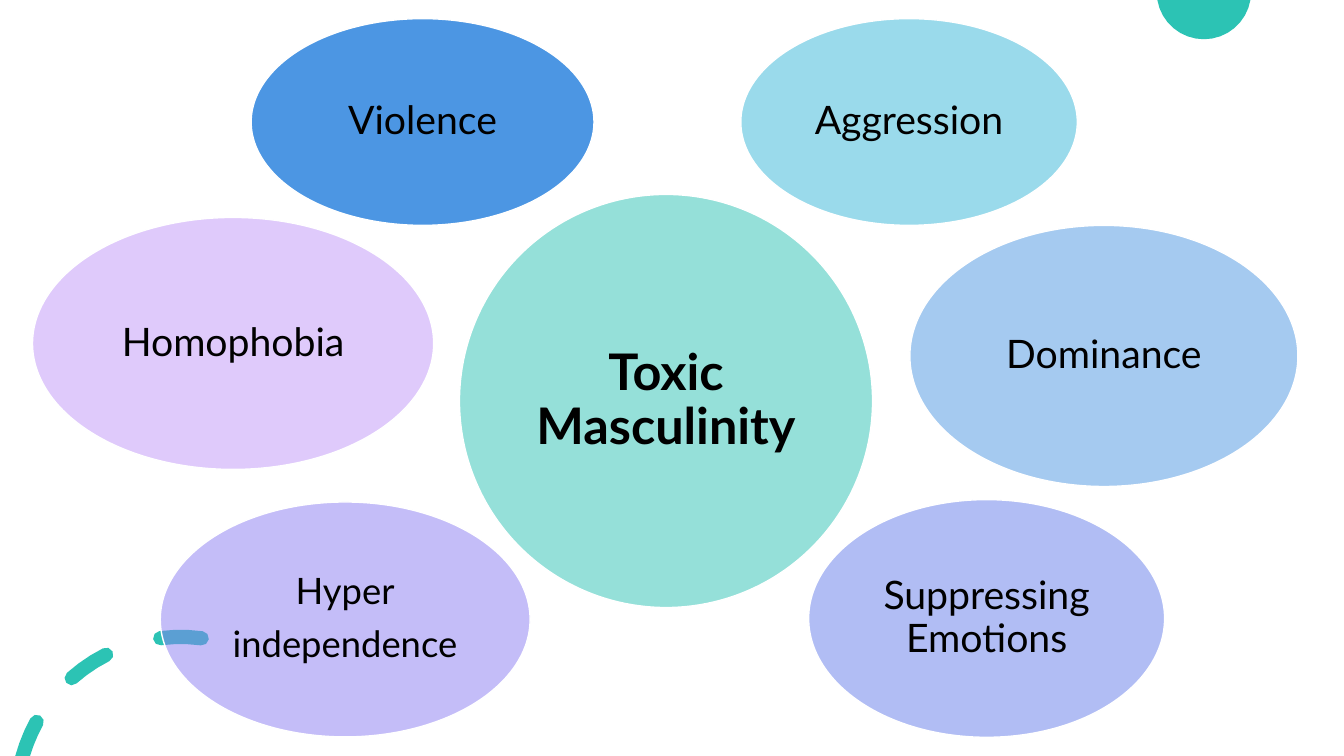
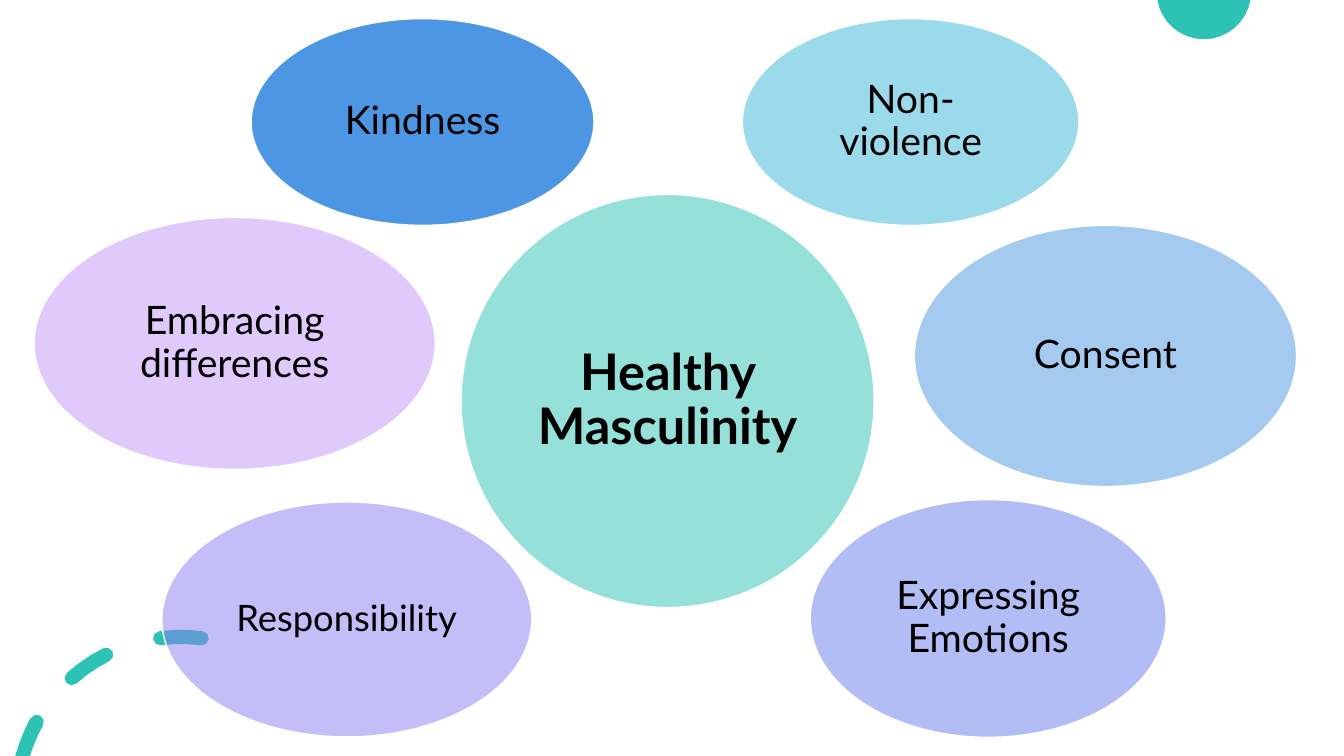
from dataclasses import dataclass
from math import asin, cos, pi, radians, sin

from lxml.etree import SubElement
from pptx import Presentation
from pptx.dml.color import RGBColor
from pptx.enum.shapes import MSO_SHAPE
from pptx.enum.text import MSO_ANCHOR, MSO_AUTO_SIZE, PP_ALIGN
from pptx.oxml.ns import qn
from pptx.util import Cm, Pt

# Shared look, lengths in centimetres
FONT = "Lato"
TEAL, WHITE, BLACK = "2CC3B4", "FFFFFF", "000000"
SLIDE_W, SLIDE_H = 33.87, 19.05
INSET = 0.15

Point = tuple[float, float]


@dataclass(frozen=True)
class Bubble:
    left: float
    top: float
    width: float
    height: float
    color: str
    size: int = 28
    alpha: int = 50


@dataclass(frozen=True)
class Label:
    lines: tuple[str, ...]
    trim: float = 0  # width taken off the bubble, kept centred
    fixed: bool = False  # not moved by the slide's shift


@dataclass(frozen=True)
class MindMap:
    title: str
    shift: float
    labels: tuple[Label, ...]


HUB = Bubble(11.58, 4.9, 10.41, 10.41, TEAL, 36)

# Clockwise from the top right
BUBBLES = (
    Bubble(18.67, 0.47, 8.48, 5.21, "36B7D9"),
    Bubble(22.93, 5.68, 9.78, 6.58, "4C96E3"),
    Bubble(20.38, 12.59, 8.97, 5.99, "647DEB"),
    Bubble(4.04, 12.65, 9.32, 5.92, "8A7CF3", size=26),
    Bubble(0.82, 5.48, 10.11, 6.35, "C097F8"),
    Bubble(6.33, 0.47, 8.64, 5.21, "4C96E3", alpha=100),
)

MIND_MAPS = (
    MindMap("Toxic Masculinity", 0, (
        Label(("Aggression",)),
        Label(("Dominance",)),
        Label(("Suppressing Emotions",)),
        Label(("Hyper", "independence")),
        Label(("Homophobia",)),
        Label(("Violence",), fixed=True),
    )),
    MindMap("Healthy Masculinity", 0.04, (
        Label(("Non-violence",)),
        Label(("Consent",), trim=0.15),
        Label(("Expressing Emotions",)),
        Label(("Responsibility",)),
        Label(("Embracing differences",)),
        Label(("Kindness",), fixed=True),
    )),
)


def rgb(color: str) -> RGBColor:
    return RGBColor.from_string(color)


def paint(sp, color: str, alpha: int = 100) -> None:
    sp.shadow.inherit = False
    sp.fill.solid()
    sp.fill.fore_color.rgb = rgb(color)
    if alpha < 100:
        clr = sp._element.spPr.find(qn("a:solidFill"))[0]
        SubElement(clr, qn("a:alpha")).set("val", str(alpha * 1000))


def write(tf, lines: tuple[str, ...], size: int, bold: bool = False) -> None:
    tf.word_wrap = True
    tf.auto_size = MSO_AUTO_SIZE.NONE
    tf.vertical_anchor = MSO_ANCHOR.MIDDLE
    tf.margin_left = tf.margin_right = Cm(INSET)
    tf.margin_top = tf.margin_bottom = Cm(INSET)
    for i, line in enumerate(lines):
        p = tf.add_paragraph() if i else tf.paragraphs[0]
        p.alignment = PP_ALIGN.CENTER
        p.line_spacing = 0.9
        if i < len(lines) - 1:
            p.space_after = Pt(10)
        r = p.add_run()
        r.text = line
        r.font.name = FONT
        r.font.size = Pt(size)
        r.font.bold = bold
        r.font.color.rgb = rgb(BLACK)


def add_bubble(s, b: Bubble, shift: float = 0, trim: float = 0):
    sp = s.shapes.add_shape(MSO_SHAPE.OVAL, Cm(b.left + shift + trim / 2),
                            Cm(b.top), Cm(b.width - trim), Cm(b.height))
    paint(sp, b.color, b.alpha)
    sp.line.color.rgb = rgb(WHITE)
    sp.line.width = Pt(1)
    return sp


def arc(cx: float, cy: float, radius: float, start: float, end: float,
        steps: int) -> list[Point]:
    """Points on a circle; angles run clockwise from the left, in radians."""
    angles = [start + (end - start) * i / steps for i in range(steps + 1)]
    return [(cx - radius * cos(a), cy - radius * sin(a)) for a in angles]


def add_outline(s, contours: list[list[Point]]):
    """One shape from one or more closed contours."""
    paths = [[(Cm(x), Cm(y)) for x, y in c] for c in contours]
    fb = s.shapes.build_freeform(*paths[0][0], scale=1.0)
    for i, pts in enumerate(paths):
        if i:
            fb.move_to(*pts[0])
        fb.add_line_segments(pts[1:], close=True)
    sp = fb.convert_to_shape()
    paint(sp, TEAL)
    sp.line.fill.background()
    return sp


def dash(start: float, end: float, cut: bool = False) -> list[Point]:
    """A round-ended dash on the corner ring, or one cut by the slide's foot."""
    cx, cy, radius, half = 4.55, 20.19, 4.14, 0.18
    a, b = radians(start), radians(end)
    outer, inner = radius + half, radius - half
    a_out, a_in = a, a
    if cut:
        a_out, a_in = [asin((cy - SLIDE_H) / r) for r in (outer, inner)]
    pts = arc(cx, cy, outer, a_out, b, 3)
    pts += arc(cx - radius * cos(b), cy - radius * sin(b), half,
               b, b + pi, 4)[1:-1]
    pts += arc(cx, cy, inner, b, a_in, 3)
    if not cut:
        pts += arc(cx - radius * cos(a), cy - radius * sin(a), half,
                   a + pi, a + 2 * pi, 4)[1:-1]
    return pts


def decorate(s, layout) -> None:
    """Draw the corner ornaments and hand them to the layout."""
    radius, above = 1.19, 0.2
    edge = asin(above / radius)
    disc = arc(30.34, -above, radius, -edge, edge - pi, 16)
    dashes = [dash(15.35, 28.9, cut=True), dash(48.5, 63.1), dash(82.9, 97.4)]
    for contours in ([disc], dashes):
        sp = add_outline(s, contours)
        layout.element.cSld.spTree.append(sp._element)


def add_mind_map(s, m: MindMap) -> None:
    # Hub with the slide title in its inscribed square
    add_bubble(s, HUB, m.shift)
    title = s.shapes.title
    side = HUB.width * cos(pi / 4)
    gap = (HUB.width - side) / 2
    title.left, title.top = Cm(HUB.left + m.shift + gap), Cm(HUB.top + gap)
    title.width = title.height = Cm(side)
    write(title.text_frame, (m.title,), HUB.size, bold=True)
    s.element.cSld.spTree.append(title._element)  # in front of the hub

    # Surrounding traits
    for b, label in zip(BUBBLES, m.labels):
        sp = add_bubble(s, b, 0 if label.fixed else m.shift, label.trim)
        write(sp.text_frame, label.lines, b.size)


def main() -> None:
    prs = Presentation()
    prs.slide_width, prs.slide_height = Cm(SLIDE_W), Cm(SLIDE_H)
    layout = prs.slide_layouts[5]
    for i, m in enumerate(MIND_MAPS):
        s = prs.slides.add_slide(layout)
        if i == 0:
            decorate(s, layout)
        add_mind_map(s, m)
    prs.save("out.pptx")


if __name__ == "__main__":
    main()
